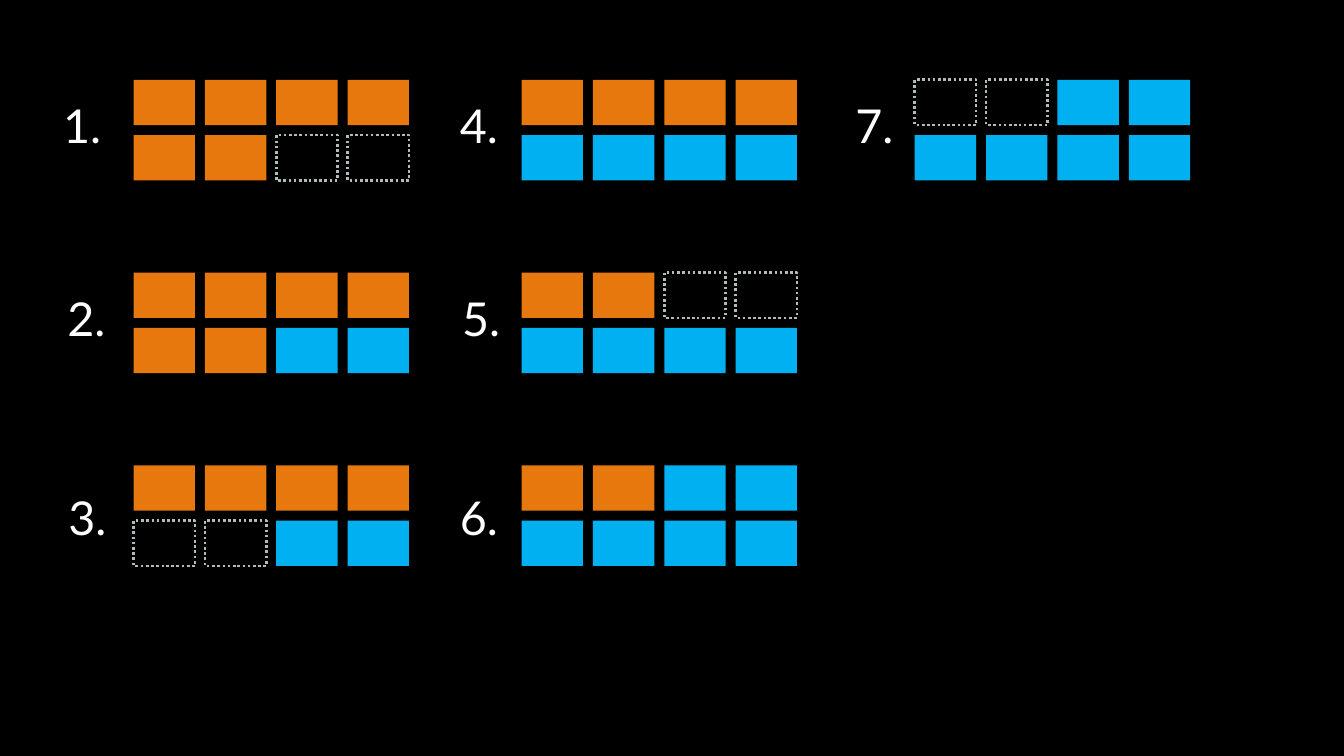
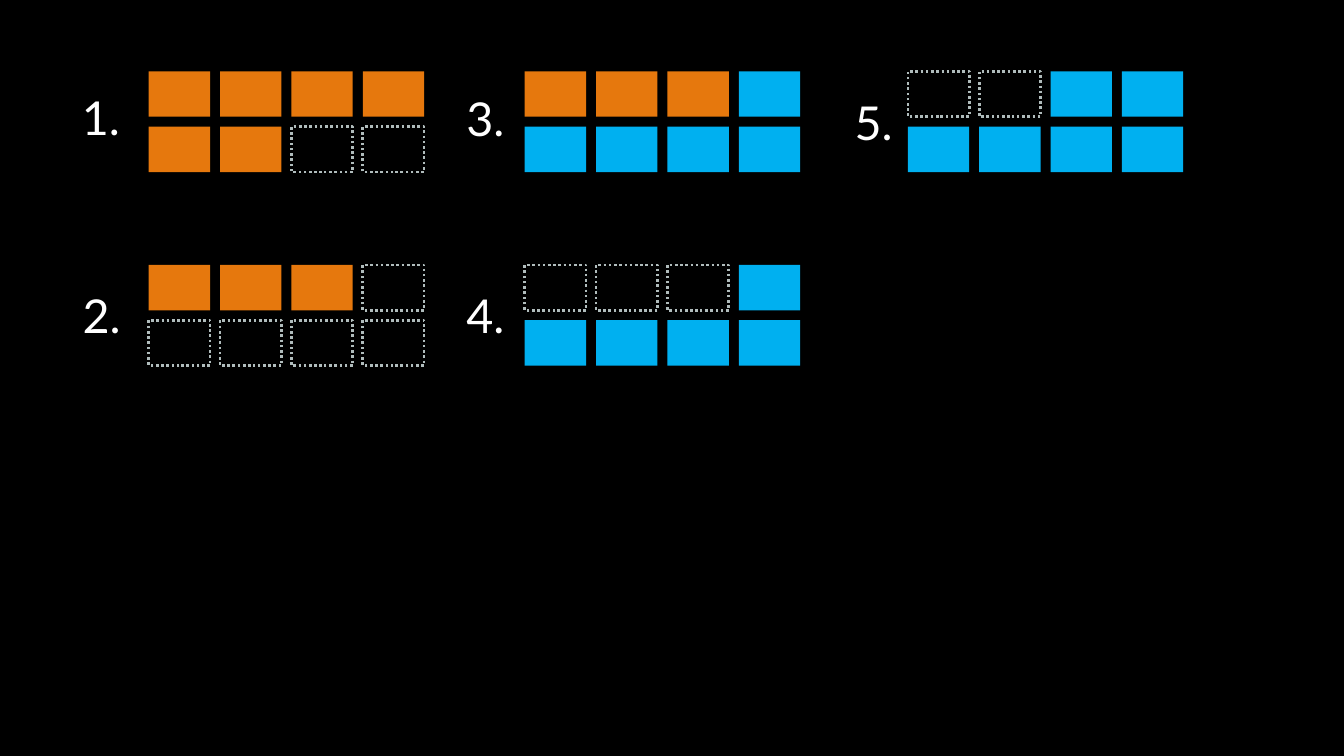
from dataclasses import dataclass
from pptx import Presentation
from pptx import util as u
from pptx.dml.color import RGBColor
from pptx.enum import dml, shapes, text


@dataclass(frozen=True)
class Theme:
    background: RGBColor = RGBColor(0x00, 0x00, 0x00)
    orange: RGBColor = RGBColor(0xE6, 0x78, 0x0D)
    blue: RGBColor = RGBColor(0x00, 0xB0, 0xF0)
    outline: RGBColor = RGBColor(0xB0, 0xBC, 0xBC)
    label: RGBColor = RGBColor(0xFF, 0xFF, 0xFF)
    font: str = "Lato"
    label_size: float = 40
    outline_width: float = 2.25


THEME = Theme()
FILLS = {"O": THEME.orange, "B": THEME.blue}
CELL_W, CELL_H = 52.6, 38.9
PITCH_X, PITCH_Y = 61.15, 47.4
LABEL_W, LABEL_H = 59, 55.4

SLIDES = [
    {
        "lefts": [114.5, 447.1, 784.1],
        "tops": [68.4, 233.6, 398.9],
        "panels": [
            (["OOOO", "OO.."], (41, 79.2)),
            (["OOOO", "OOBB"], (44.6, 244.8)),
            (["OOOO", "..BB"], (45.4, 415.4)),
            (["OOOO", "BBBB"], (380.9, 79.9)),
            (["OO..", "BBBB"], (383, 244.8)),
            (["OOBB", "BBBB"], (380.9, 415.4)),
            (["..BB", "BBBB"], (720, 79.2)),
        ],
    },
    {
        "lefts": [127.5, 449.8, 778.2],
        "tops": [61.2, 227.1],
        "panels": [
            (["OOOO", "OO.."], (56.9, 72.7)),
            (["OOO.", "...."], (57.6, 242.6)),
            (["OOOB", "BBBB"], (386.6, 73.4)),
            (["...B", "BBBB"], (386.6, 242.6)),
            (["..BB", "BBBB"], (719.3, 77)),
        ],
    },
]


def set_attrs(obj, formats):
    for name, value in formats.items():
        setattr(obj, name, value)


def add_cell(s, x, y, kind):
    sp = s.shapes.add_shape(shapes.MSO_SHAPE.RECTANGLE,
                            u.Pt(x), u.Pt(y), u.Pt(CELL_W), u.Pt(CELL_H))
    sp.shadow.inherit = False
    if kind in FILLS:
        sp.fill.solid()
        sp.fill.fore_color.rgb = FILLS[kind]
        sp.line.fill.background()
    else:
        sp.fill.background()
        sp.line.color.rgb = THEME.outline
        set_attrs(sp.line, {"width": u.Pt(THEME.outline_width),
                            "dash_style": dml.MSO_LINE.ROUND_DOT})


def add_grid(s, left, top, rows):
    for i, row in enumerate(rows):
        for j, kind in enumerate(row):
            add_cell(s, left + j * PITCH_X, top + i * PITCH_Y, kind)


def add_label(s, x, y, label):
    sp = s.shapes.add_textbox(u.Pt(x), u.Pt(y), u.Pt(LABEL_W), u.Pt(LABEL_H))
    tf = sp.text_frame
    set_attrs(tf, {"word_wrap": True,
                   "auto_size": text.MSO_AUTO_SIZE.SHAPE_TO_FIT_TEXT})
    p = tf.paragraphs[0]
    p.alignment = text.PP_ALIGN.CENTER
    r = p.add_run()
    r.text = label
    set_attrs(r.font, {"name": THEME.font, "size": u.Pt(THEME.label_size)})
    r.font.color.rgb = THEME.label


def add_panels(s, lefts, tops, panels):
    for i, (rows, label_at) in enumerate(panels):
        column, row = divmod(i, len(tops))
        add_grid(s, lefts[column], tops[row], rows)
        add_label(s, *label_at, f"{i + 1}.")


def main():
    prs = Presentation()
    set_attrs(prs, {"slide_width": u.Pt(1152), "slide_height": u.Pt(648)})
    fill = prs.slide_master.background.fill
    fill.solid()
    fill.fore_color.rgb = THEME.background
    for content in SLIDES:
        s = prs.slides.add_slide(prs.slide_layouts[6])
        add_panels(s, **content)
    prs.save("out.pptx")


if __name__ == "__main__":
    main()
